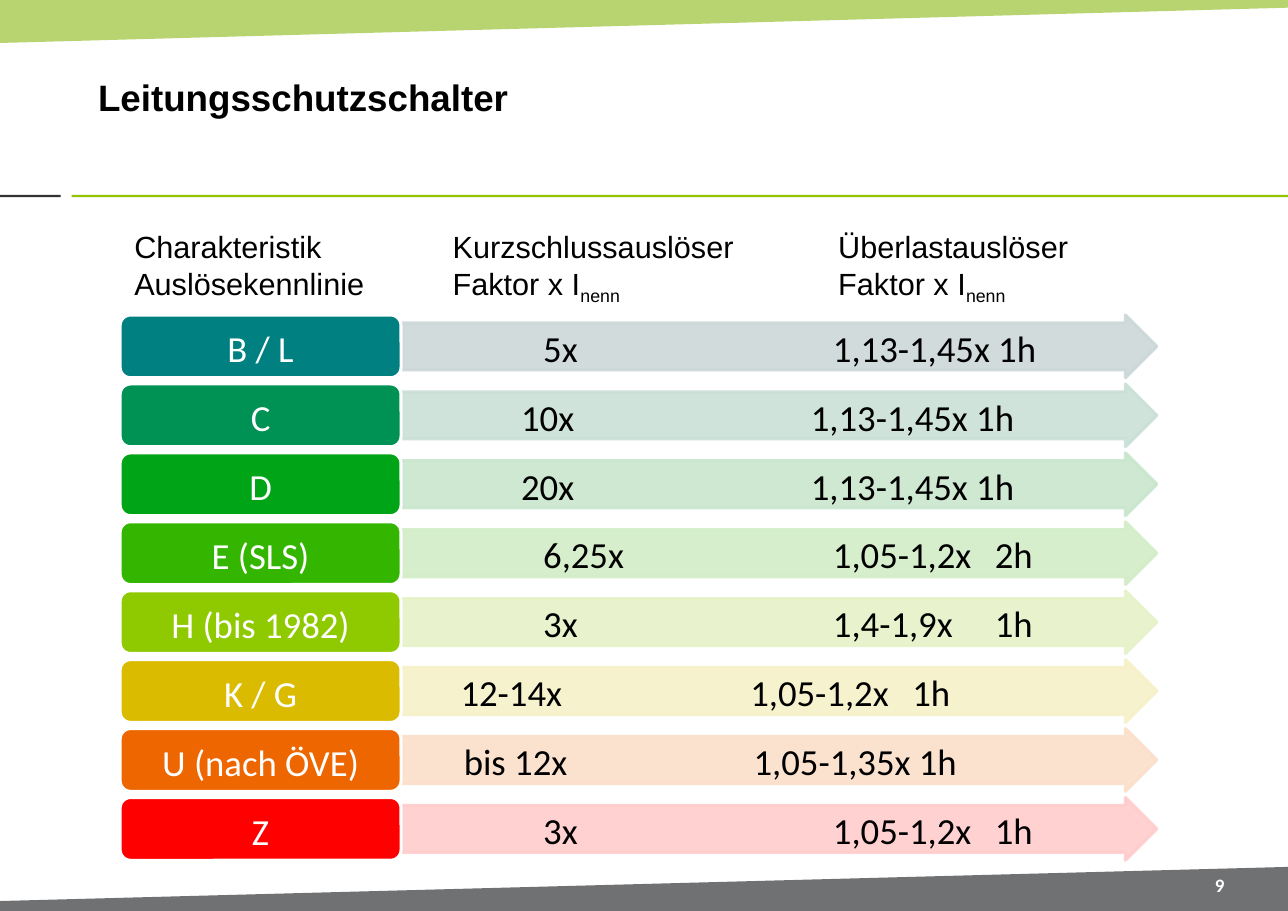
from dataclasses import dataclass

from lxml import etree
from pptx import Presentation
from pptx.dml.color import RGBColor
from pptx.enum.shapes import MSO_SHAPE
from pptx.enum.text import MSO_ANCHOR, MSO_AUTO_SIZE, PP_ALIGN
from pptx.oxml.ns import qn
from pptx.util import Inches, Pt

RECTANGLE = MSO_SHAPE.RECTANGLE
ROUNDED = MSO_SHAPE.ROUNDED_RECTANGLE
ARROW = MSO_SHAPE.RIGHT_ARROW
MIDDLE = MSO_ANCHOR.MIDDLE
LEFT = PP_ALIGN.LEFT
CENTER = PP_ALIGN.CENTER
NO_FIT = MSO_AUTO_SIZE.NONE


@dataclass(frozen=True)
class Theme:
    heading_font: str = "Arial"
    body_font: str = "Calibri"
    title_size: float = 24
    header_size: float = 20
    row_size: float = 24
    number_size: float = 12.4
    black: str = "000000"
    white: str = "FFFFFF"
    top_band: str = "95C02A"
    bottom_band: str = "707173"
    dark_rule: str = "313130"
    green_rule: str = "94C600"


THEME = Theme()
WIDTH, HEIGHT = 11.69, 8.27
FACTOR_TAB, HOUR_TAB = 2.63, 4.1

HEADERS = [
    (1.12, 2.52, "Charakteristik", "Auslösekennlinie", ""),
    (4.01, 3.03, "Kurzschlussauslöser", "Faktor x I", "nenn"),
    (7.51, 2.73, "Überlastauslöser", "Faktor x I", "nenn"),
]

ROWS = [
    ("B / L", "008080", "CCD8D8", 1.26, "5x\t1,13-1,45x 1h"),
    ("C", "009254", "CAE0D6", 1.06, "10x\t1,13-1,45x 1h"),
    ("D", "00A417", "C9E6CD", 1.06, "20x\t1,13-1,45x 1h"),
    ("E (SLS)", "34B600", "D3EDC8", 1.26, "6,25x\t1,05-1,2x\t2h"),
    ("H (bis 1982)", "8FC900", "E6F2C8", 1.26, "3x\t1,4-1,9x\t1h"),
    ("K / G", "DBBB00", "F7F1C9", 0.51, "12-14x\t1,05-1,2x\t1h"),
    ("U (nach ÖVE)", "ED6600", "FBDFCA", 0.54, "bis 12x\t1,05-1,35x 1h"),
    ("Z", "FF0000", "FFCCCC", 1.26, "3x\t1,05-1,2x\t1h"),
]


def set_alpha(shape, percent):
    for color in shape.fill._xPr.iter(qn("a:srgbClr")):
        etree.SubElement(color, qn("a:alpha")).set("val", str(percent * 1000))


def paint(shape, fill, line=None):
    shape.shadow.inherit = False
    shape.fill.solid()
    shape.fill.fore_color.rgb = RGBColor.from_string(fill)
    if line:
        shape.line.color.rgb = RGBColor.from_string(line)
        shape.line.width = Pt(2)
    else:
        shape.line.fill.background()


def add_shape(page, kind, box, fill, line=None):
    shape = page.shapes.add_shape(kind, *map(Inches, box))
    paint(shape, fill, line)
    return shape


def set_frame(frame, insets, anchor=MIDDLE):
    frame.word_wrap = True
    frame.auto_size = NO_FIT
    frame.vertical_anchor = anchor
    (frame.margin_left, frame.margin_top,
     frame.margin_right, frame.margin_bottom) = map(Inches, insets)


def add_span(para, text, font, size, color, bold=False):
    span = para.add_run()
    span.text = text
    span.font.name = font
    span.font.size = Pt(size)
    span.font.bold = bold
    span.font.color.rgb = RGBColor.from_string(color)
    return span


def add_tabs(para, stops):
    tabs = etree.SubElement(para._p.get_or_add_pPr(), qn("a:tabLst"))
    for stop in stops:
        tab = etree.SubElement(tabs, qn("a:tab"))
        tab.set("pos", str(Inches(stop)))
        tab.set("algn", "l")


def add_band(page, points, color):
    start, *others = [(Inches(x), Inches(y)) for x, y in points]
    builder = page.shapes.build_freeform(*start)
    builder.add_line_segments(others, close=True)
    band = builder.convert_to_shape()
    paint(band, color)
    return band


def add_background(page, width, height):
    top = add_band(page, [(0, 0), (width, 0), (width, 0.07), (0, 0.39)], THEME.top_band)
    set_alpha(top, 67)
    add_shape(page, RECTANGLE, (0, 1.77, 0.55, 0.02), THEME.dark_rule)
    add_shape(page, RECTANGLE, (0.65, 1.77, width - 0.65, 0.02), THEME.green_rule)
    add_band(page, [(width, height), (0, height), (0, 8.18), (width, 7.87)],
             THEME.bottom_band)


def add_title(page, box, text):
    title = page.shapes.title
    title.left, title.top, title.width, title.height = map(Inches, box)
    set_frame(title.text_frame, (0.11, 0.06, 0.11, 0.06))
    para = title.text_frame.paragraphs[0]
    para.alignment = LEFT
    add_span(para, text, THEME.heading_font, THEME.title_size, THEME.black, True)


def add_page_number(page, box, text):
    number = page.shapes.add_textbox(*map(Inches, box))
    set_frame(number.text_frame, (0.11, 0.06, 0.11, 0.06))
    para = number.text_frame.paragraphs[0]
    para.alignment = CENTER
    add_span(para, text, THEME.body_font, THEME.number_size, THEME.white, True)


def add_header(page, box, first, second, subscript):
    header = page.shapes.add_textbox(*map(Inches, box))
    frame = header.text_frame
    set_frame(frame, (0.1, 0.05, 0.1, 0.05), MSO_ANCHOR.TOP)
    style = (THEME.heading_font, THEME.header_size, THEME.black)
    add_span(frame.paragraphs[0], first, *style)
    para = frame.add_paragraph()
    add_span(para, second, *style)
    if subscript:
        span = add_span(para, subscript, *style)
        span._r.get_or_add_rPr().set("baseline", "-25000")


def add_row(page, box, name, color, tint, indent, values):
    left, top, width, height = box
    label_width = 2.55
    arrow_left = left + label_width + 0.01
    arrow = add_shape(page, ARROW, (arrow_left, top, left + width - arrow_left, height),
                      tint, tint)
    arrow.adjustments[0] = 0.75
    arrow.adjustments[1] = 0.5
    set_alpha(arrow, 90)
    set_frame(arrow.text_frame, (indent + 0.02, 0.02, 0.02, 0))
    para = arrow.text_frame.paragraphs[0]
    para.alignment = LEFT
    add_tabs(para, (FACTOR_TAB, HOUR_TAB))
    add_span(para, values, THEME.body_font, THEME.row_size, THEME.black)

    label = add_shape(page, ROUNDED, (left, top, label_width, height), color, THEME.white)
    set_frame(label.text_frame, (0.1, 0.05, 0.1, 0.02))
    para = label.text_frame.paragraphs[0]
    para.alignment = CENTER
    add_span(para, name, THEME.body_font, THEME.row_size, THEME.white)


def add_rows(page, box):
    left, top, width, height = box
    row_height = 0.57
    pitch = (height - row_height) / (len(ROWS) - 1)
    for index, row in enumerate(ROWS):
        add_row(page, (left, top + index * pitch, width, row_height), *row)


def main():
    deck = Presentation()
    deck.slide_width, deck.slide_height = Inches(WIDTH), Inches(HEIGHT)
    page = deck.slides.add_slide(deck.slide_layouts[5])
    add_background(page, WIDTH, HEIGHT)
    add_title(page, (0.78, 0.28, 10.43, 1.19), "Leitungsschutzschalter")
    add_page_number(page, (10.73, 7.89, 0.68, 0.29), "9")
    add_rows(page, (1.09, 2.86, 9.41, 4.95))
    for left, width, *texts in HEADERS:
        add_header(page, (left, 2.02, width, 0.77), *texts)
    deck.save("out.pptx")


if __name__ == "__main__":
    main()
